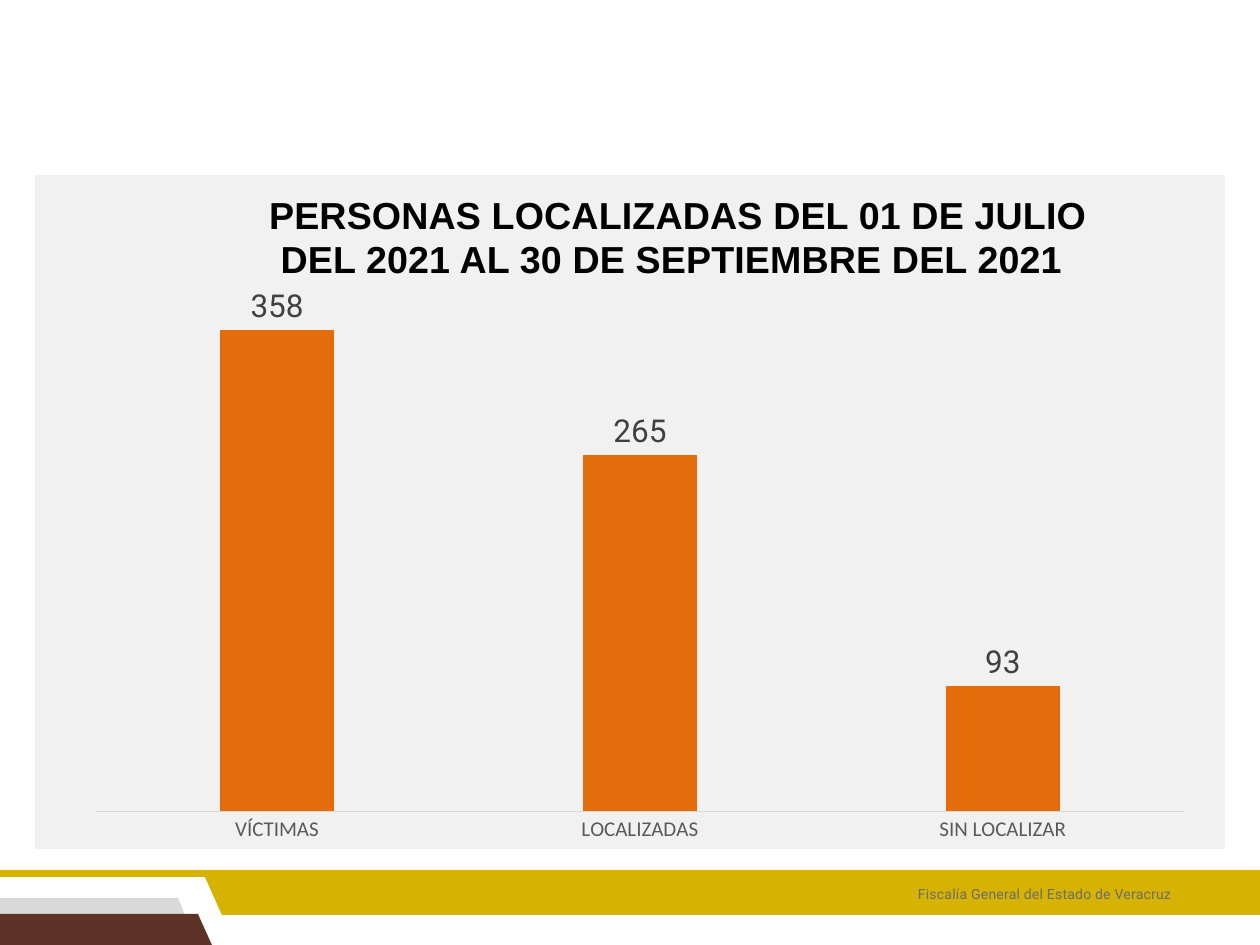
from lxml import etree
from pptx import Presentation
from pptx.chart.data import CategoryChartData as Data
from pptx.dml.color import RGBColor
from pptx.enum.chart import XL_CHART_TYPE as Kind, XL_LABEL_POSITION as Spot
from pptx.enum.chart import XL_TICK_MARK as Tick
from pptx.enum.text import PP_ALIGN as Align
from pptx.oxml.ns import qn
from pptx.util import Emu, Pt

SCALE = 914400 / 126
SIZE = 1260, 945
BANDS = [
    ("D9D9D9", [(178, 898), (0, 898), (0, 934), (193, 934)]),
    ("5E3327", [(198, 914), (0, 914), (0, 945), (212, 945)]),
    ("D6B300", [(1260, 870), (0, 870), (0, 877), (205, 877), (222, 915), (1260, 915)]),
    ("F1F1F1", [(1225, 175), (35, 175), (35, 849), (1225, 849)]),
]
TEXTS = [
    dict(text="Fiscalía General del Estado de Veracruz", at=(917, 885, 263, 20), top=1,
         indent=(1, 0), para=dict(),
         font=dict(name="Roboto", size=Pt(8)), color="6C6C6C"),
    dict(text="PERSONAS LOCALIZADAS DEL 01 DE JULIO DEL 2021 AL 30 DE SEPTIEMBRE DEL 2021",
         at=(-21, 189, 1128, 93), top=5, indent=(258, 13),
         para=dict(alignment=Align.CENTER, line_spacing=Pt(24.8)),
         font=dict(name="Arial", size=Pt(21.5), bold=True), color="000000"),
]
COUNTS = {"VÍCTIMAS": 358, "LOCALIZADAS": 265, "SIN LOCALIZAR": 93}
CHART = 73, 262, 1134, 591
PLOT = dict(x=0.02, y=0.02, w=0.96, h=0.91)


def px(n):
    return Emu(round(n * SCALE))


def rgb(code):
    return RGBColor.from_string(code)


def style(item, **vals):
    for key, val in vals.items():
        setattr(item, key, val)


def band(slide, color, pts):
    form = slide.shapes.build_freeform(*pts[0], scale=SCALE)
    form.add_line_segments(pts[1:], close=True)
    shape = form.convert_to_shape()
    shape.shadow.inherit = False
    shape.fill.solid()
    shape.fill.fore_color.rgb = rgb(color)
    shape.line.fill.background()


def label(slide, text, at, top, indent, para, font, color):
    frame = slide.shapes.add_textbox(*map(px, at)).text_frame
    style(frame, word_wrap=True, margin_left=0, margin_right=0,
          margin_top=px(top), margin_bottom=0)
    line = frame.paragraphs[0]
    style(line, **para)
    props = line._p.get_or_add_pPr()
    for key, val in zip(("marL", "indent"), indent):
        props.set(key, str(px(val)))
    run = line.add_run()
    run.text = text
    style(run.font, **font)
    run.font.color.rgb = rgb(color)
    run._r.get_or_add_rPr().set("spc", "10")


def place(chart):
    area = chart._chartSpace.chart.plotArea
    for old in area.findall(qn("c:layout")):
        area.remove(old)
    layout = etree.Element(qn("c:layout"))
    area.insert(0, layout)
    man = etree.SubElement(layout, qn("c:manualLayout"))
    modes = dict(layoutTarget="inner", xMode="edge", yMode="edge")
    for key, val in {**modes, **PLOT}.items():
        etree.SubElement(man, qn("c:" + key)).set("val", str(val))


def graph(slide):
    data = Data()
    data.categories = list(COUNTS)
    data.add_series("Personas", list(COUNTS.values()))
    chart = slide.shapes.add_chart(Kind.COLUMN_CLUSTERED, *map(px, CHART), data).chart
    style(chart, has_legend=False, has_title=False)
    style(chart.font, name="Calibri", size=Pt(10))
    chart.font.color.rgb = rgb("000000")
    style(chart.value_axis, visible=False, has_major_gridlines=False,
          minimum_scale=0, maximum_scale=400)
    axis = chart.category_axis
    style(axis, major_tick_mark=Tick.NONE, minor_tick_mark=Tick.NONE)
    axis.format.line.color.rgb = rgb("D9D9D9")
    axis.format.line.width = Pt(0.75)
    plot = chart.plots[0]
    style(plot, gap_width=219, overlap=-27, vary_by_categories=False, has_data_labels=True)
    tags = plot.data_labels
    style(tags, show_value=True, position=Spot.OUTSIDE_END)
    for font, name, size, color in [(axis.tick_labels.font, "Calibri", 12, "595959"),
                                    (tags.font, "Roboto", 18, "404040")]:
        style(font, name=name, size=Pt(size))
        font.color.rgb = rgb(color)
    fill = plot.series[0].format.fill
    fill.solid()
    fill.fore_color.rgb = rgb("E46C0A")
    place(chart)


def main():
    """Build the slide on located persons."""
    deck = Presentation()
    deck.slide_width, deck.slide_height = map(px, SIZE)
    slide = deck.slides.add_slide(deck.slide_layouts[6])
    for color, pts in BANDS:
        band(slide, color, pts)
    for item in TEXTS:
        label(slide, **item)
    graph(slide)
    deck.save("out.pptx")


if __name__ == "__main__":
    main()
